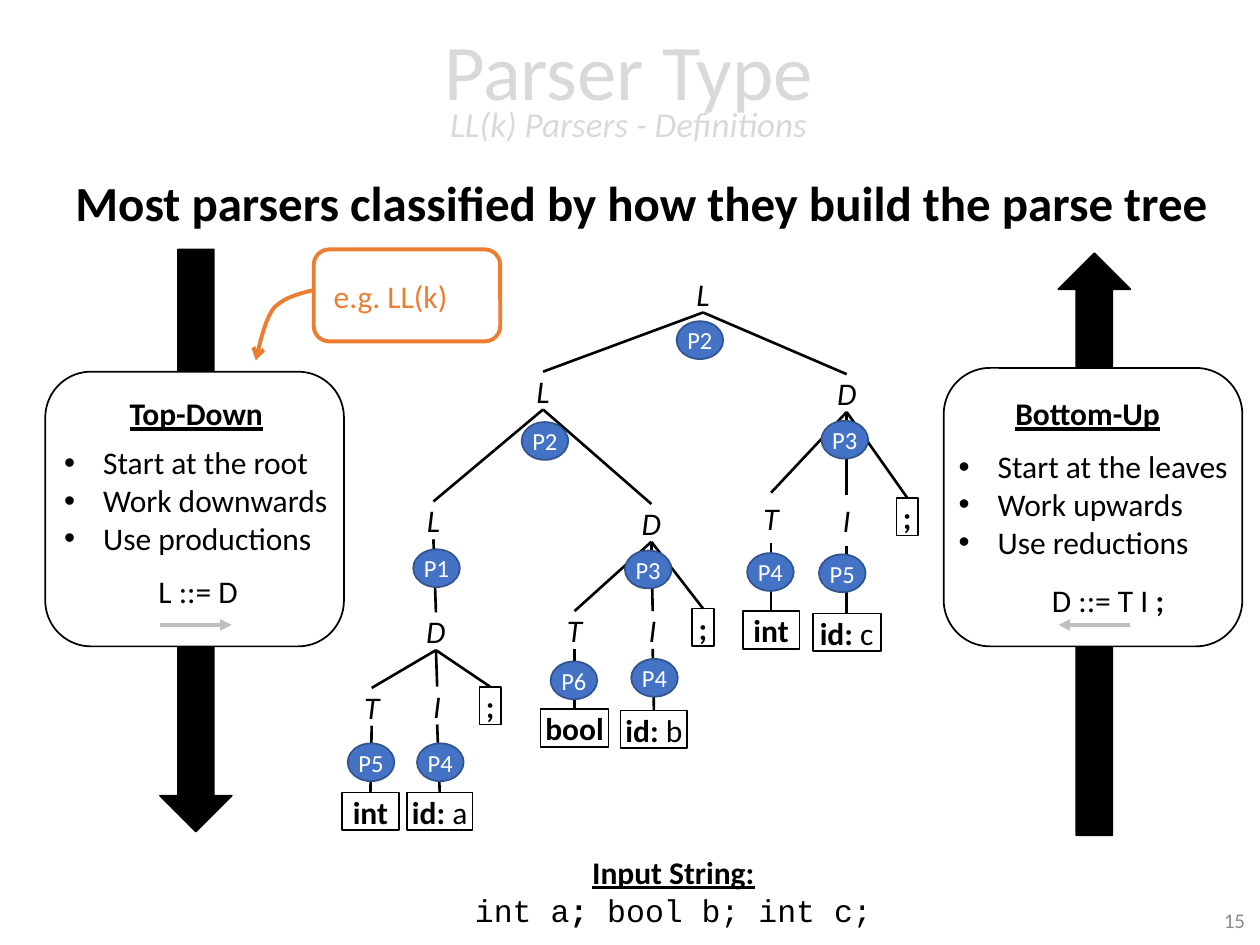
"""Build a slide on how top-down and bottom-up parsers grow a parse tree."""
from pptx import Presentation
from pptx.dml.color import RGBColor
from pptx.enum.shapes import MSO_CONNECTOR, MSO_SHAPE
from pptx.enum.text import MSO_ANCHOR, MSO_AUTO_SIZE, PP_ALIGN
from pptx.oxml.ns import qn
from pptx.util import Inches, Pt
from lxml.etree import SubElement

RECT, ROUND = MSO_SHAPE.RECTANGLE, MSO_SHAPE.ROUNDED_RECTANGLE
OVAL, DOWN = MSO_SHAPE.OVAL, MSO_SHAPE.DOWN_ARROW
LINE = MSO_CONNECTOR.STRAIGHT
TOP, MID = MSO_ANCHOR.TOP, MSO_ANCHOR.MIDDLE
LEFT, MIDDLE, RIGHT = PP_ALIGN.LEFT, PP_ALIGN.CENTER, PP_ALIGN.RIGHT
FIT = MSO_AUTO_SIZE.SHAPE_TO_FIT_TEXT
THEME = {
    "ink": "000000", "paper": "FFFFFF", "pale": "D9D9D9", "dim": "8C8C8C",
    "rule": "BFBFBF", "hot": "ED7D31", "blue": "4472C4", "navy": "325491",
    "font": "Calibri", "mono": "Courier New",
    "title": 45, "lead": 28, "sub": 20, "text": 18, "mark": 14, "page": 12,
}
COLS, ROWS = 100, 75
CELL = Inches(10) / COLS

TITLE = [[("Parser Type", ""), ("\v", ""), ("LL(k) Parsers - Definitions", "i")]]
LEAD = [[("Most parsers classified by how they build the parse tree", "b")]]
INPUT = [[("Input String:", "bu")],
         [("int a", "m"), (";", "mb"), (" bool b; int c;", "m")]]
SIDES = [
    {"arrow": (12.7, 19.8, 5.7, 46.2), "turn": 0, "card": (3.6, 29.5, 23.7, 21.8),
     "head": ("Top-Down", (9.3, 30.8, 12.7, 4)),
     "list": (["Start at the root", "Work downwards", "Use productions"],
              (4.1, 34.7, 23.2, 10.1)),
     "rule": ([("L ::= D", "")], (11.6, 44.9, 8.4, 4)), "way": (12.7, 18.4)},
    {"arrow": (84, 20.1, 5.7, 46.2), "turn": 180, "card": (74.9, 29.2, 23.7, 22.1),
     "head": ("Bottom-Up", (79.6, 30.8, 13.7, 4)),
     "list": (["Start at the leaves", "Work upwards", "Use reductions"],
              (75.1, 35, 23.6, 10.1)),
     "rule": ([("D ::= T I ", ""), (";", "b")], (82.5, 45.6, 11.1, 4)),
     "way": (89.7, 84)},
]
SIGNS = [
    ("l1", "L", 55.8, 21.8, 3), ("l2", "L", 43.1, 29.5, 3),
    ("d3", "D", 67.2, 29.7, 3), ("l3", "L", 34.4, 39.8, 3),
    ("d2", "D", 51.7, 40, 3), ("d1", "D", 34.6, 48.6, 3),
    ("t1", "T", 29.5, 54.6, 3), ("i1", "I", 34.7, 54.5, 3),
    ("t2", "T", 45.6, 48.5, 3), ("i2", "I", 51.8, 48.5, 3),
    ("t3", "T", 61.2, 39.1, 4), ("i3", "I", 67.2, 39.3, 4),
]
LEAVES = [
    ("s1", [(";", "b")], 38.9, 54.5, 1.7), ("s2", [(";", "b")], 55.8, 48.3, 1.7),
    ("s3", [(";", "b")], 72, 39.5, 1.7),
    ("k1", [("int", "b")], 29.4, 62.9, 4.5),
    ("k2", [("bool", "b")], 45.6, 56.3, 5.4),
    ("k3", [("int", "b")], 61.2, 48.5, 4.5),
    ("n1", [("id: ", "b"), ("a", "")], 34.9, 62.9, 5.2),
    ("n2", [("id: ", "b"), ("b", "")], 51.9, 56.4, 5.3),
    ("n3", [("id: ", "b"), ("c", "")], 67.2, 48.7, 5.4),
]
KIDS = {"l1": "l2 d3", "l2": "l3 d2", "l3": "d1"}
for n in "123":
    KIDS |= {"d" + n: f"t{n} i{n} s{n}", "t" + n: "k" + n, "i" + n: "n" + n}
MARKS = [
    ("P5", 29.45, 59), ("P4", 34.95, 59), ("P1", 34.65, 43.6), ("P6", 45.55, 52.5),
    ("P4", 51.95, 52.3), ("P3", 51.45, 43.7), ("P5", 66.85, 44), ("P4", 61.15, 43.9),
    ("P3", 67.05, 33.4), ("P2", 43.25, 33.5), ("P2", 55.55, 25.5),
]
CURVE = [((25, 23), (23.8, 23.3), (22.5, 23.6), (21.7, 24.5)),
         ((21.7, 24.5), (21, 25.5), (20.7, 27), (20.3, 28.6))]


def at(n):
    return round(n * CELL)


def hue(name):
    return RGBColor.from_string(THEME[name])


def say(shape, paras, size="text", tint="ink", align=LEFT, anchor=TOP,
        pad=(1, 0.5), wrap=True, fit=False, gap=None, dot=False):
    frame = shape.text_frame
    form = {"word_wrap": wrap, "vertical_anchor": anchor,
            "margin_left": at(pad[0]), "margin_right": at(pad[0]),
            "margin_top": at(pad[1]), "margin_bottom": at(pad[1])}
    if fit:
        form["auto_size"] = FIT
    for key, val in form.items():
        setattr(frame, key, val)
    for i, runs in enumerate(paras):
        para = frame.paragraphs[0] if i == 0 else frame.add_paragraph()
        para.alignment = align
        if gap:
            para.line_spacing = gap
        if dot:
            prop = para._p.get_or_add_pPr()
            prop.set("marL", str(at(3.1)))
            prop.set("indent", str(-at(3.1)))
            SubElement(prop, qn("a:buFont")).set("typeface", "Arial")
            SubElement(prop, qn("a:buChar")).set("char", "•")
        for text, look in runs:
            if text == "\v":
                para.add_line_break()
                continue
            run = para.add_run()
            run.text = text
            small = size == "title" and look == "i"
            form = {"name": THEME["mono" if "m" in look else "font"],
                    "size": Pt(THEME["sub" if small else size]),
                    "bold": "b" in look, "italic": "i" in look,
                    "underline": "u" in look}
            for key, val in form.items():
                setattr(run.font, key, val)
            run.font.color.rgb = hue(tint)


def note(slide, box, paras, **form):
    shape = slide.shapes.add_textbox(*map(at, box))
    say(shape, paras, **form)
    return shape


def draw(slide, kind, box, fill="paper", edge="ink", wide=1):
    shape = slide.shapes.add_shape(kind, *map(at, box))
    shape.shadow.inherit = False
    shape.fill.solid()
    shape.fill.fore_color.rgb = hue(fill)
    shape.line.color.rgb = hue(edge)
    shape.line.width = Pt(wide)
    return shape


def link(slide, ends, tint="ink", wide=1.5, tip=None):
    line = slide.shapes.add_connector(LINE, *map(at, ends))
    SubElement(line._element.spPr, qn("a:effectLst"))
    line.line.color.rgb = hue(tint)
    line.line.width = Pt(wide)
    if tip:
        head(line, tip)
    return line


def head(shape, tip):
    SubElement(shape.line._get_or_add_ln(), qn("a:tailEnd")).set("type", tip)


def bend(slide):
    dots = []
    for curve in CURVE:
        for i in range(13):
            t = i / 12
            parts = ((1 - t) ** 3, 3 * t * (1 - t) ** 2, 3 * t * t * (1 - t), t ** 3)
            dots.append(tuple(at(sum(w * p[k] for w, p in zip(parts, curve)))
                              for k in (0, 1)))
    path = slide.shapes.build_freeform(*dots[0])
    path.add_line_segments(dots[1:], close=False)
    shape = path.convert_to_shape()
    shape.shadow.inherit = False
    shape.fill.background()
    shape.line.color.rgb = hue("hot")
    shape.line.width = Pt(2.25)
    head(shape, "arrow")


def tree(slide):
    nodes = {}
    for key, text, x, y, tall in SIGNS:
        nodes[key] = note(slide, (x - 0.8, y, 1.6, tall), [[(text, "i")]],
                          align=MIDDLE, anchor=MID, pad=(0, 0), wrap=False)
    for key, runs, x, y, wide in LEAVES:
        nodes[key] = draw(slide, RECT, (x - wide / 2, y, wide, 3))
        say(nodes[key], [runs], align=MIDDLE, pad=(0, 0), wrap=False)
    for key, kids in KIDS.items():
        for kid in kids.split():
            line = link(slide, (0, 0, 1, 1))
            line.begin_connect(nodes[key], 2)
            line.end_connect(nodes[kid], 0)
    for text, x, y in MARKS:
        mark = draw(slide, OVAL, (x - 1.85, y, 3.7, 3), "blue", "navy")
        say(mark, [[(text, "")]], "mark", "paper", MIDDLE, MID, (0, 0))


def side(slide, part):
    draw(slide, DOWN, part["arrow"], "ink").rotation = part["turn"]
    draw(slide, ROUND, part["card"])
    text, box = part["head"]
    note(slide, box, [[(text, "bu")]], wrap=False, fit=True)
    items, box = part["list"]
    note(slide, box, [[(item, "")] for item in items], wrap=False, fit=True, dot=True)
    runs, box = part["rule"]
    note(slide, box, [runs], wrap=False, fit=True)
    start, end = part["way"]
    link(slide, (start, 49.6, end, 49.6), "rule", 2.25, "triangle")


def main():
    deck = Presentation()
    deck.slide_width, deck.slide_height = at(COLS), at(ROWS)
    slide = deck.slides.add_slide(deck.slide_layouts[6])
    note(slide, (1.2, 0.3, 97.4, 14.5), TITLE, size="title", tint="pale",
         align=MIDDLE, anchor=MID, gap=0.7)
    note(slide, (5, 13.7, 92.2, 6.1), LEAD, size="lead", gap=0.9)
    note(slide, (77.3, 71, 22.5, 4), [[("15", "")]], size="page", tint="dim",
         align=RIGHT, anchor=MID)
    note(slide, (36.6, 67.2, 33.7, 7.1), INPUT, align=MIDDLE, wrap=False, fit=True)
    draw(slide, ROUND, (24.9, 19.8, 14.8, 7.3), edge="hot", wide=2.25)
    tree(slide)
    for part in SIDES:
        side(slide, part)
    note(slide, (25.5, 21.5, 13.9, 4), [[("e.g. LL(k)", "")]], tint="hot")
    bend(slide)
    deck.save("out.pptx")


if __name__ == "__main__":
    main()
